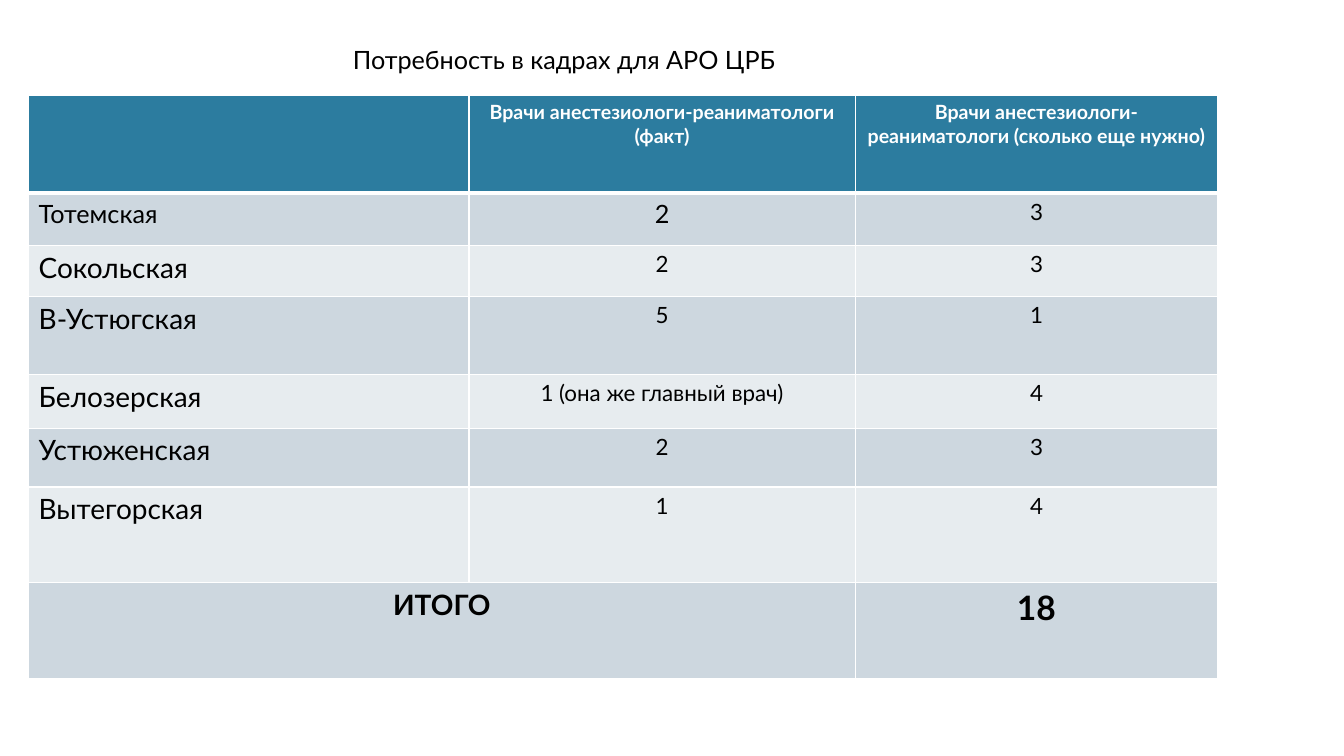
from lxml import etree
from pptx import Presentation
from pptx.dml.color import RGBColor
from pptx.enum.text import MSO_ANCHOR, PP_ALIGN
from pptx.oxml.ns import qn
from pptx.util import Cm, Pt

LEFT, CENTER = PP_ALIGN.LEFT, PP_ALIGN.CENTER
TOP = MSO_ANCHOR.TOP

COLORS = {
    "header": "2C7C9F",
    "odd": "CDD7DF",
    "even": "E7ECEF",
    "line": "FFFFFF",
    "light": "FFFFFF",
    "dark": "000000",
}
COL_WIDTHS = [11.1, 9.73, 9.14]
ROW_HEIGHTS = [2.47, 1.32, 1.29, 1.96, 1.35, 1.48, 2.41, 2.41]
ROWS = [
    ["", "Врачи анестезиологи-реаниматологи (факт)",
     "Врачи анестезиологи-реаниматологи (сколько еще нужно)"],
    ["Тотемская", "2", "3"],
    ["Сокольская", "2", "3"],
    ["В-Устюгская", "5", "1"],
    ["Белозерская", "1 (она же главный врач)", "4"],
    ["Устюженская", "2", "3"],
    ["Вытегорская", "1", "4"],
    ["ИТОГО", "", "18"],
]
BODY_SIZES = [20, 16, 16]
FIRST_SIZES = [18, 18, 16]
TOTAL_SIZES = [20, 20, 24]
THIN, THICK = 0.96, 3


class Slide:
    def __init__(self, prs, font):
        self.font = font
        self.s = prs.slides.add_slide(prs.slide_layouts[5])

    def set_text(self, tf, text, size, color, align, bold=False):
        p = tf.paragraphs[0]
        p.text = text
        p.alignment = align
        p.font.name = self.font
        p.font.size = Pt(size)
        p.font.bold = bold
        p.font.color.rgb = RGBColor.from_string(COLORS[color])

    def title(self, text, x, y, w, h, size):
        sp = self.s.shapes.title
        sp.left, sp.top, sp.width, sp.height = Cm(x), Cm(y), Cm(w), Cm(h)
        tf = sp.text_frame
        tf.word_wrap = False
        tf.vertical_anchor = TOP
        self.set_text(tf, text, size, "dark", LEFT)

    def table(self, x, y, widths, heights):
        shape = self.s.shapes.add_table(
            len(heights), len(widths), Cm(x), Cm(y),
            Cm(sum(widths)), Cm(sum(heights)))
        table = shape.table
        for column, width in zip(table.columns, widths):
            column.width = Cm(width)
        for row, height in zip(table.rows, heights):
            row.height = Cm(height)
        return table

    def cell(self, cell, text, fill, size, color, align, bold, top, bottom):
        """Fill and border a cell; top and bottom are line widths in points."""
        self.set_text(cell.text_frame, text, size, color, align, bold)
        tcPr = cell._tc.get_or_add_tcPr()
        for side, width in zip("LRTB", (THIN, THIN, top, bottom)):
            ln = etree.SubElement(tcPr, qn(f"a:ln{side}"), w=str(Pt(width)))
            solid = etree.SubElement(ln, qn("a:solidFill"))
            etree.SubElement(solid, qn("a:srgbClr"), val=COLORS["line"])
        cell.fill.solid()
        cell.fill.fore_color.rgb = RGBColor.from_string(COLORS[fill])


def main():
    prs = Presentation()
    prs.slide_width, prs.slide_height = Cm(33.87), Cm(19.05)
    slide = Slide(prs, "Lato")
    slide.title("Потребность в кадрах для АРО ЦРБ", 8.64, 0.99, 11.28, 1.02, 18)

    table = slide.table(0.72, 2.4, COL_WIDTHS, ROW_HEIGHTS)
    last = len(ROWS) - 1
    table.cell(last, 0).merge(table.cell(last, 1))
    sizes = {0: [14] * 3, 1: FIRST_SIZES, last: TOTAL_SIZES}
    for i, row in enumerate(ROWS):
        header, total = i == 0, i == last
        fill = "header" if header else "odd" if i % 2 else "even"
        for j, text in enumerate(row):
            slide.cell(
                table.cell(i, j), text, fill,
                size=sizes.get(i, BODY_SIZES)[j],
                color="light" if header else "dark",
                align=CENTER if j or total else LEFT,
                bold=header or total,
                top=THICK if i == 1 else THIN,
                bottom=THICK if header else THIN)

    prs.save("out.pptx")


if __name__ == "__main__":
    main()
